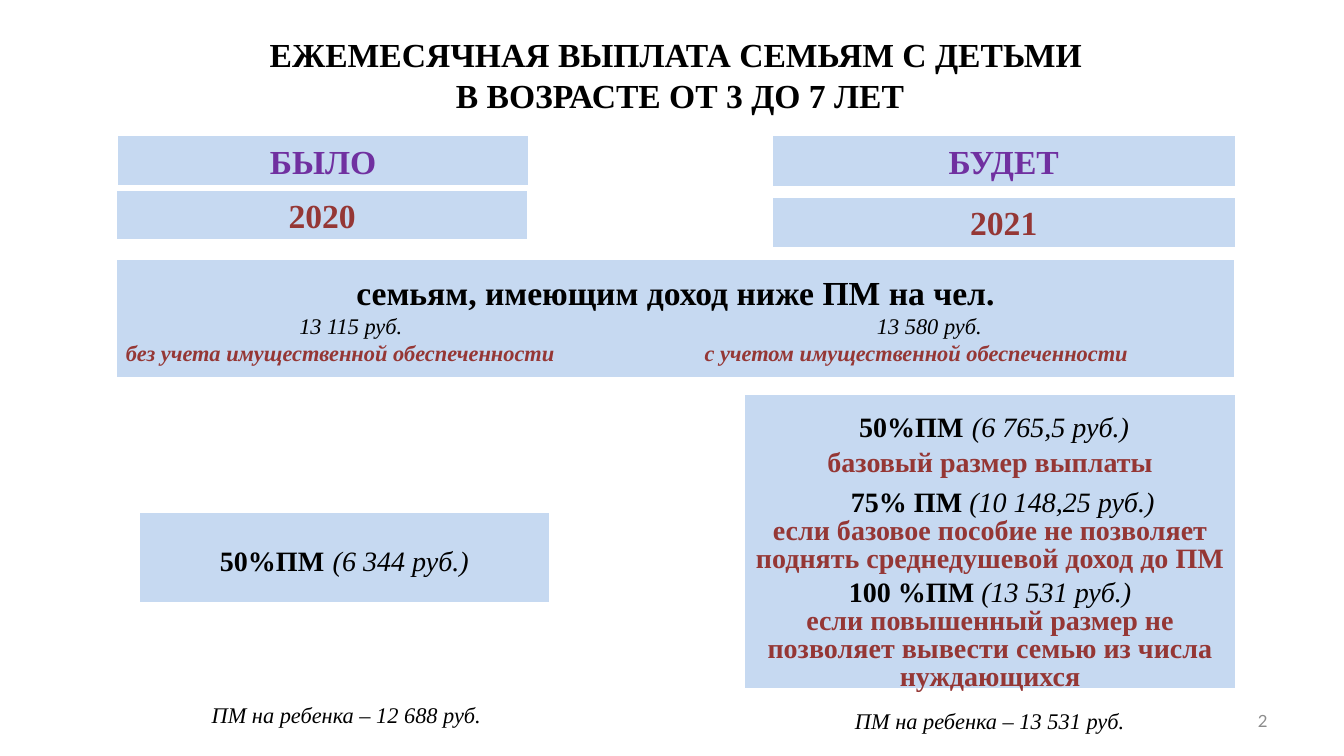
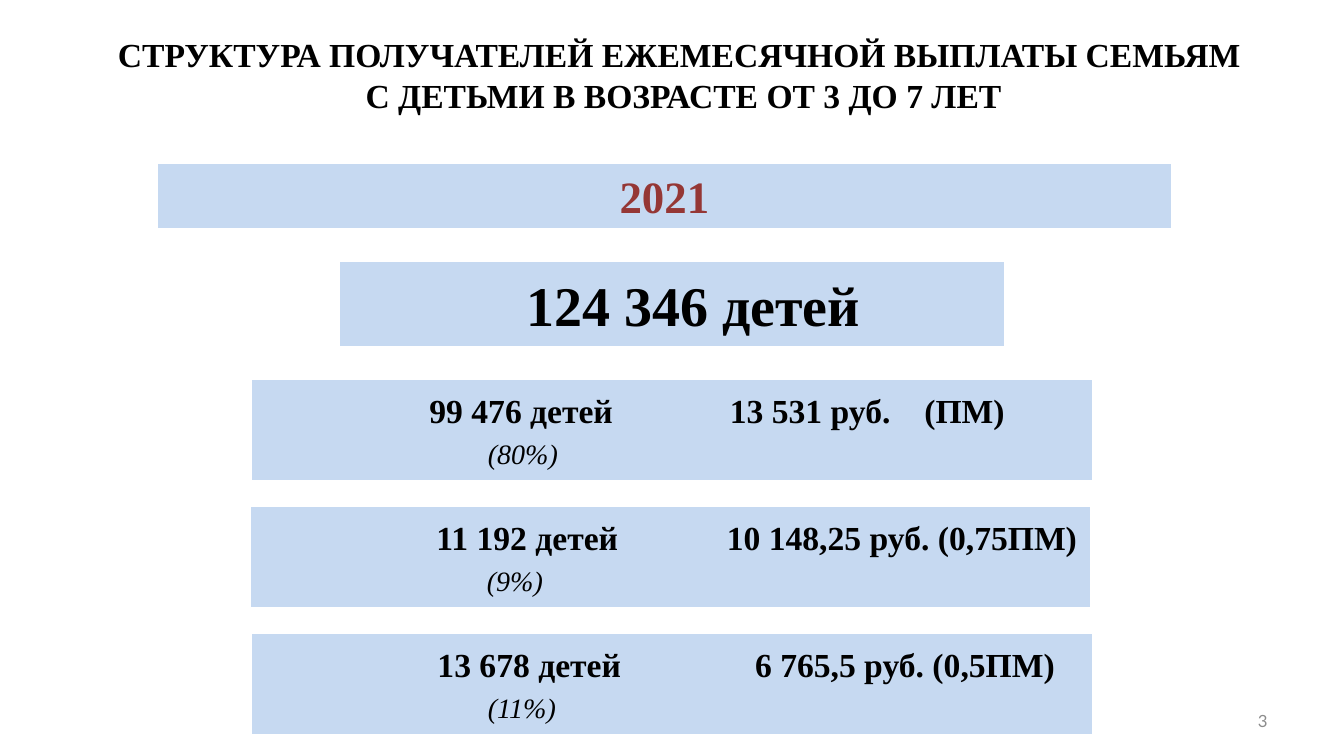
from dataclasses import dataclass

from lxml.etree import SubElement
from pptx import Presentation
from pptx.dml.color import RGBColor
from pptx.enum.shapes import MSO_SHAPE as Preset
from pptx.enum.text import MSO_ANCHOR as Anchor, PP_ALIGN as Align
from pptx.oxml.ns import qn
from pptx.util import Pt

EMU_PER_PX = 9144  # 100 px to the inch


@dataclass(frozen=True)
class Theme:
    panel: str = "C6D9F1"
    paper: str = "FFFFFF"
    ink: str = "000000"
    accent: str = "953735"
    period: str = "7030A0"
    muted: str = "8C8C8C"
    serif: str = "Times New Roman"
    sans: str = "Lato"
    total: int = 40
    banner: int = 32
    heading: int = 24
    body: int = 20
    note: int = 16
    number: int = 12
    border: int = 2


THEME = Theme()


@dataclass(frozen=True)
class Span:
    text: str
    size: int = THEME.heading
    color: str = THEME.ink
    bold: bool = True
    italic: bool = False
    font: str = THEME.serif


@dataclass(frozen=True)
class Line:
    spans: tuple[Span, ...]
    align: Align = Align.CENTER
    tabs: tuple[int, ...] = ()
    indent: int = 0
    spacing: int = 0  # exact line height in points
    before: float = 0


@dataclass(frozen=True)
class Box:
    left: int
    top: int
    width: int
    height: int


@dataclass(frozen=True)
class Recipients:
    left: int
    children: str
    share: str
    amount: str
    tabs: tuple[int, ...]


def px(length: int) -> int:
    return length * EMU_PER_PX


def italic(text: str, size: int) -> Span:
    return Span(text, size, bold=False, italic=True)


def single(text: str, size: int = THEME.heading, color: str = THEME.ink) -> Line:
    return Line((Span(text, size, color),))


def percent(share: str, amount: str, gap: int = THEME.heading,
            indent: int = 0, before: float = 0) -> Line:
    """Share of the minimum in bold, then the sum in italics."""
    spans = Span(share, THEME.body), Span(" ", gap), italic(amount, THEME.body)
    return Line(spans, indent=indent, before=before)


def condition(text: str, spacing: int = 0) -> Line:
    return Line((Span(text, THEME.body, THEME.accent),), spacing=spacing)


def write(frame, lines: tuple[Line, ...], anchor: Anchor) -> None:
    frame.word_wrap = True
    frame.vertical_anchor = anchor
    for index, line in enumerate(lines):
        paragraph = frame.add_paragraph() if index else frame.paragraphs[0]
        paragraph.alignment = line.align
        if line.spacing:
            paragraph.line_spacing = Pt(line.spacing)
        if line.before:
            paragraph.space_before = Pt(line.before)
        properties = paragraph._p.get_or_add_pPr()
        if line.indent:
            properties.set("marL", str(px(line.indent)))
        if line.tabs:
            stops = SubElement(properties, qn("a:tabLst"))
            for stop in line.tabs:
                SubElement(stops, qn("a:tab"), pos=str(px(stop)), algn="l")
        paragraph.text = line.spans[0].text
        for span in line.spans[1:]:
            paragraph.add_run().text = span.text
        for run, span in zip(paragraph.runs, line.spans):
            font = run.font
            font.name, font.size = span.font, Pt(span.size)
            font.bold, font.italic = span.bold, span.italic
            font.color.rgb = RGBColor.from_string(span.color)


def add_text(slide, box: Box, *lines: Line, anchor: Anchor = Anchor.TOP) -> None:
    label = slide.shapes.add_textbox(
        px(box.left), px(box.top), px(box.width), px(box.height))
    write(label.text_frame, lines, anchor)


def add_panel(slide, box: Box, *lines: Line, fill: str = THEME.panel,
              anchor: Anchor = Anchor.MIDDLE, inset: int = 5) -> None:
    panel = slide.shapes.add_shape(
        Preset.RECTANGLE, px(box.left), px(box.top), px(box.width), px(box.height))
    panel.shadow.inherit = False
    panel.fill.solid()
    panel.fill.fore_color.rgb = RGBColor.from_string(fill)
    panel.line.color.rgb = RGBColor.from_string(THEME.paper)
    panel.line.width = Pt(THEME.border)
    panel.text_frame.margin_top = px(inset)
    write(panel.text_frame, lines, anchor)


def start_slide(deck, title_box: Box, title: tuple[str, ...], number: int):
    """Blank slide with the shared title and page number."""
    slide = deck.slides.add_slide(deck.slide_layouts[6])
    add_text(slide, title_box, *map(single, title))
    page = Span(str(number), THEME.number, THEME.muted, False, font=THEME.sans)
    add_text(slide, Box(956, 695, 311, 40), Line((page,), Align.RIGHT),
             anchor=Anchor.MIDDLE)
    return slide


def build_comparison(deck) -> None:
    slide = start_slide(deck, Box(194, 29, 961, 91), (
        "ЕЖЕМЕСЯЧНАЯ ВЫПЛАТА СЕМЬЯМ С ДЕТЬМИ ", "В ВОЗРАСТЕ ОТ 3 ДО 7 ЛЕТ"), 2)

    # Periods and years
    for box, text, color in (
        (Box(116, 134, 409, 51), "БЫЛО", THEME.period),
        (Box(765, 134, 461, 52), "БУДЕТ", THEME.period),
        (Box(115, 188, 409, 51), "2020", THEME.accent),
        (Box(765, 195, 461, 51), "2021", THEME.accent),
    ):
        add_panel(slide, box, single(text, color=color))

    # Income condition
    means = ("без учета имущественной обеспеченности\t"
             "с учетом имущественной обеспеченности")
    add_panel(
        slide, Box(115, 257, 1110, 118),
        single("семьям, имеющим доход ниже ПМ на чел."),
        Line((italic("\t13 115 руб.\t13 580 руб.", THEME.note),),
             Align.LEFT, tabs=(172, 745)),
        Line((Span(means, THEME.note, THEME.accent, italic=True),),
             Align.LEFT, tabs=(574,)))

    # Payment amounts
    add_panel(slide, Box(137, 508, 409, 91), percent("50%ПМ", "(6 344 руб.)"))
    add_panel(
        slide, Box(738, 391, 488, 293),
        percent("50%ПМ", "(6 765,5 руб.)", indent=8),
        condition("базовый размер выплаты"),
        percent("75% ПМ", "(10 148,25 руб.)", THEME.body, indent=25, before=4.6),
        condition("если базовое пособие не позволяет поднять "
                  "среднедушевой доход до ПМ", 20),
        percent("100 %ПМ", "(13 531 руб.)", THEME.body),
        condition("если повышенный размер не позволяет вывести "
                  "семью из числа нуждающихся", 20),
        anchor=Anchor.TOP, inset=10)

    # Minimum per child
    for box, amount in ((Box(141, 685, 405, 48), "12 688"),
                        (Box(779, 690, 405, 49), "13 531")):
        minimum = italic(f"ПМ на ребенка – {amount} руб.", THEME.note)
        add_panel(slide, box, Line((minimum,)), fill=THEME.paper)


def build_structure(deck) -> None:
    slide = start_slide(deck, Box(60, 29, 1236, 91), (
        "СТРУКТУРА ПОЛУЧАТЕЛЕЙ ЕЖЕМЕСЯЧНОЙ ВЫПЛАТЫ СЕМЬЯМ ",
        "С ДЕТЬМИ В ВОЗРАСТЕ ОТ 3 ДО 7 ЛЕТ"), 3)

    # Year and total
    add_panel(slide, Box(155, 161, 1008, 67),
              single("2021", THEME.banner, THEME.accent))
    add_panel(slide, Box(336, 259, 661, 86),
              Line((Span("124 346 детей", THEME.total),), indent=42))

    # Recipients by size of payment
    groups = (
        Recipients(249, "99 476 детей", "(80%)", "13 531 руб.\t(ПМ)", (167, 465, 658)),
        Recipients(248, "11 192 детей", "(9%)", "10 148,25 руб. (0,75ПМ)", (175, 463)),
        Recipients(249, "13 678 детей", "(11%)", "6 765,5 руб. (0,5ПМ)", (175, 490)),
    )
    for row, group in enumerate(groups):
        add_panel(
            slide, Box(group.left, 376 + 126 * row, 835, 102),
            Line((Span(f"\t{group.children}\t{group.amount}"),),
                 Align.LEFT, group.tabs),
            Line((Span("\t"), italic(group.share, THEME.body)), Align.LEFT, (225,)))


def main() -> None:
    deck = Presentation()
    deck.slide_width, deck.slide_height = px(1333), px(750)
    build_comparison(deck)
    build_structure(deck)
    deck.save("out.pptx")


if __name__ == "__main__":
    main()
